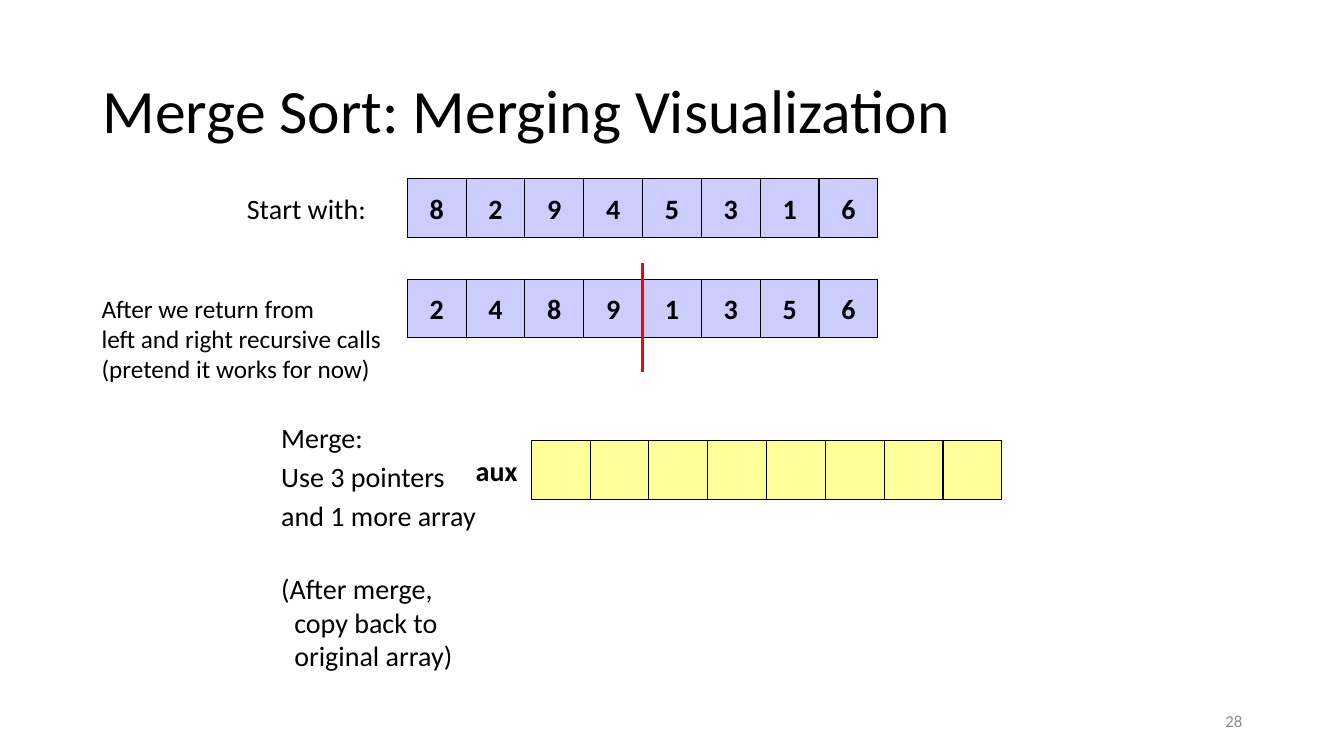
from dataclasses import dataclass

from pptx import Presentation
from pptx.dml.color import RGBColor as Color
from pptx.enum.shapes import MSO_CONNECTOR as Connector, MSO_SHAPE as Shape
from pptx.enum.text import MSO_ANCHOR as Anchor, PP_ALIGN as Align
from pptx.oxml.xmlchemy import OxmlElement
from pptx.util import Inches, Pt


@dataclass(frozen=True)
class Theme:
    """Colours, font and type sizes of the deck."""
    font: str = "Calibri"
    ink: str = "000000"
    muted: str = "8C8C8C"
    filled: str = "CCCCFF"
    empty: str = "FFFF99"
    divider: str = "FF0000"
    title: int = 44
    body: int = 20
    note: int = 18
    footer: int = 12


THEME = Theme()
WIDTH, HEIGHT = 13.33, 7.5
CELL = 7 / 12
ARRAY_LEFT = 4.04
HANGING = (0.38, -0.38)


def style_text(frame, lines, size, color=THEME.ink, bold=False, align=Align.LEFT, indent=(0, 0)):
    """Fill a text frame with one paragraph per line and format it."""
    frame.text = "\n".join(lines)
    for index, para in enumerate(frame.paragraphs):
        para.alignment = align
        para.space_before = Pt(size * 0.2 if index else 0)
        margin, first = indent
        properties = para._p.get_or_add_pPr()
        properties.set("marL", str(Inches(margin)))
        properties.set("indent", str(Inches(first)))
        for span in para.runs:
            span.font.name = THEME.font
            span.font.size = Pt(size)
            span.font.bold = bold
            span.font.color.rgb = Color.from_string(color)


def add_label(page, box, lines, size=THEME.body, anchor=Anchor.TOP, **style):
    """Place a wrapping text box."""
    frame = page.shapes.add_textbox(*map(Inches, box)).text_frame
    frame.word_wrap = True
    frame.vertical_anchor = anchor
    style_text(frame, lines, size, **style)
    return frame


def add_array(page, left, top, values, fill):
    """Draw a row of square cells, one for each value."""
    for column, value in enumerate(values):
        box = (left + column * CELL, top, CELL, CELL)
        cell = page.shapes.add_shape(Shape.RECTANGLE, *map(Inches, box))
        cell.shadow.inherit = False
        cell.fill.solid()
        cell.fill.fore_color.rgb = Color.from_string(fill)
        cell.line.color.rgb = Color.from_string(THEME.ink)
        cell.line.width = Pt(0.75)
        if value:
            cell.text_frame.word_wrap = False
            cell.text_frame.vertical_anchor = Anchor.MIDDLE
            style_text(cell.text_frame, [value], THEME.body, bold=True, align=Align.CENTER)


def add_divider(page, x, top, height):
    """Draw the vertical line between the sorted halves."""
    ends = map(Inches, (x, top, x, top + height))
    line = page.shapes.add_connector(Connector.STRAIGHT, *ends)
    line.line.color.rgb = Color.from_string(THEME.divider)
    line.line.width = Pt(2.25)
    line._element.spPr.append(OxmlElement("a:effectLst"))


def add_start_region(page, top):
    """Show the unsorted array and its label."""
    add_label(page, (2.35, top + 0.08, 1.58, 0.5), ["Start with:"], indent=HANGING)
    add_array(page, ARRAY_LEFT, top, "82945316", THEME.filled)


def add_halves_region(page, top):
    """Show the array with both halves sorted and split by a divider."""
    text = "After we return from\vleft and right recursive calls (pretend it works for now)"
    add_label(page, (0.91, top + 0.09, 3.33, 1.08), [text], THEME.note)
    add_array(page, ARRAY_LEFT, top, "24891356", THEME.filled)
    add_divider(page, ARRAY_LEFT + 4 * CELL, top - 0.16, 1.08)


def add_merge_region(page, top):
    """Show the empty auxiliary array and the merge instructions."""
    steps = ["Merge:", "Use 3 pointers", "and 1 more array"]
    add_label(page, (2.69, top - 0.25, 2.42, 1.33), steps, indent=HANGING)
    add_array(page, 5.27, top, [""] * 8, THEME.empty)
    add_label(page, (2.44, top + 1.25, 2.42, 1.33),
              ["(After merge, copy back to original array)"], indent=(0.38, -0.13))
    add_label(page, (4.62, top + 0.08, 0.83, 0.44), ["aux"], bold=True)


def build_slide(page):
    """Compose the title, the three array regions and the page number."""
    title = add_label(page, (0.92, 0.4, 11.5, 1.45), ["Merge Sort: Merging Visualization"],
                      THEME.title, Anchor.MIDDLE)
    title.paragraphs[0].line_spacing = 0.9
    add_start_region(page, 1.77)
    add_halves_region(page, 2.77)
    add_merge_region(page, 4.37)
    add_label(page, (9.42, 6.95, 3, 0.4), ["28"], THEME.footer, Anchor.MIDDLE,
              color=THEME.muted, align=Align.RIGHT)


def main():
    """Build and save the deck."""
    deck = Presentation()
    deck.slide_width, deck.slide_height = Inches(WIDTH), Inches(HEIGHT)
    build_slide(deck.slides.add_slide(deck.slide_layouts[6]))
    deck.save("out.pptx")


if __name__ == "__main__":
    main()
